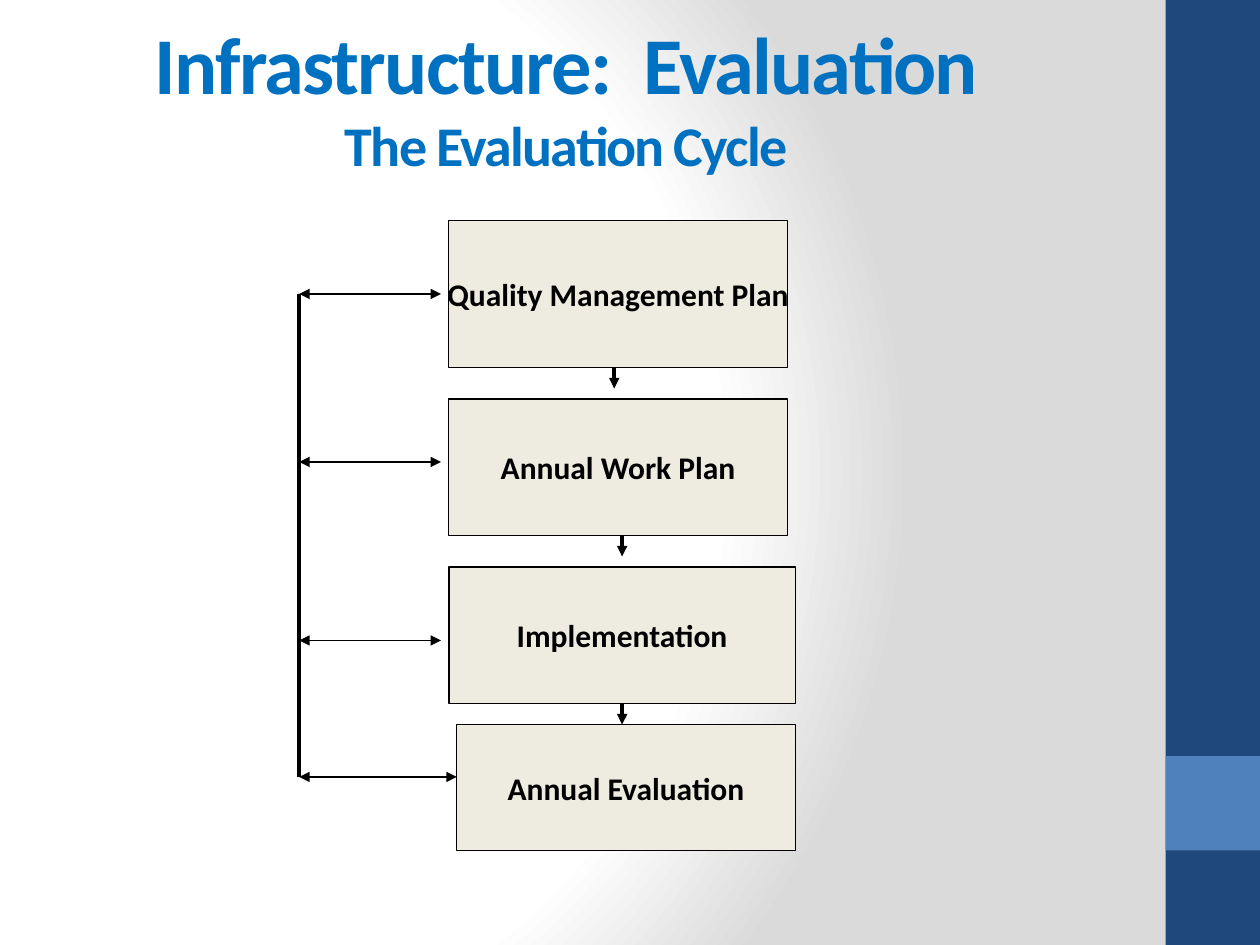
from lxml.etree import SubElement
from pptx import Presentation
from pptx.dml.color import RGBColor
from pptx.enum.shapes import MSO_CONNECTOR as Connector, MSO_SHAPE as Shape
from pptx.enum.text import MSO_ANCHOR as Anchor, PP_ALIGN as Align
from pptx.oxml import parse_xml
from pptx.oxml.ns import nsdecls, qn
from pptx.util import Inches, Pt

COLORS = {
    "navy": "1F497D",
    "blue": "4F81BD",
    "title": "0070C0",
    "box": "EEECE1",
    "ink": "000000",
    "white": "FFFFFF",
    "grey": "DADADA",
}
FONT = "Calibri"
COLUMNS, ROWS = 160, 90  # grid of the whole slide
WIDTH, HEIGHT = Inches(10), Inches(7.5)
SPINE = 38  # column of the feedback line

# Label, then left, top, right, bottom in grid units
STEPS = [
    ("Quality Management Plan", 57, 21, 100, 35),
    ("Annual Work Plan", 57, 38, 100, 51),
    ("Implementation", 57, 54, 101, 67),
    ("Annual Evaluation", 58, 69, 101, 81),
]
# Column, start row, end row
DOWN_ARROWS = [(78, 35, 37), (79, 51, 53), (79, 67, 69)]
# Row, end column
FEEDBACK_ARROWS = [(28, 56), (44, 56), (61, 56), (74, 58)]


def color(name):
    return RGBColor.from_string(COLORS[name])


def across(column):
    return round(WIDTH * column / COLUMNS)


def down(row):
    return round(HEIGHT * row / ROWS)


def area(left, top, right, bottom):
    return across(left), down(top), across(right - left), down(bottom - top)


def set_background(page):
    """Grey glow that fades to white, drawn as a circular gradient."""
    page.background.fill.solid()
    properties = page.element.find(".//" + qn("p:bgPr"))
    stops = "".join(
        f'<a:gs pos="{share * 1000}"><a:srgbClr val="{COLORS[name]}"/></a:gs>'
        for share, name in [(0, "white"), (75, "white"), (100, "grey")]
    )
    gradient = parse_xml(
        f'<a:gradFill {nsdecls("a")} rotWithShape="1"><a:gsLst>{stops}</a:gsLst>'
        '<a:path path="circle">'
        '<a:fillToRect l="20000" t="50000" r="100000" b="50000"/>'
        "</a:path></a:gradFill>"
    )
    properties.replace(properties.find(qn("a:solidFill")), gradient)


def add_block(page, bounds, fill):
    block = page.shapes.add_shape(Shape.RECTANGLE, *area(*bounds))
    block.shadow.inherit = False
    block.fill.solid()
    block.fill.fore_color.rgb = color(fill)
    block.line.fill.background()
    return block


def style_font(font, size, ink):
    font.name, font.size, font.bold = FONT, Pt(size), True
    font.color.rgb = color(ink)


def add_step(page, label, *bounds):
    box = add_block(page, bounds, "box")
    box.line.color.rgb = color("ink")
    box.line.width = Pt(0.75)
    frame = box.text_frame
    frame.word_wrap = False
    frame.vertical_anchor = Anchor.MIDDLE
    para = frame.paragraphs[0]
    para.text = label
    para.alignment = Align.CENTER
    style_font(para.font, 18, "ink")


def add_line(page, start, end, width, heads=()):
    """Heads may hold headEnd (at the start) and tailEnd (at the end)."""
    line = page.shapes.add_connector(
        Connector.STRAIGHT,
        across(start[0]), down(start[1]), across(end[0]), down(end[1]),
    )
    line.line.color.rgb = color("ink")
    line.line.width = Pt(width)
    stroke = line.line._get_or_add_ln()
    for head in heads:
        SubElement(stroke, qn(f"a:{head}"), type="triangle")
    SubElement(line.element.spPr, qn("a:effectLst"))


def add_title(page, heading, subheading):
    box = page.shapes.add_textbox(*area(14.5, 3.6, 129.3, 14))
    frame = box.text_frame
    frame.word_wrap = True
    frame.vertical_anchor = Anchor.MIDDLE
    frame.margin_bottom = 0
    para = frame.paragraphs[0]
    para.alignment = Align.CENTER
    style_font(para.font, 46, "title")
    for text, size in [(heading, 46), (subheading, 32)]:
        if para.runs:
            para.add_line_break()
        span = para.add_run()
        span.text = text
        span.font.size = Pt(size)
        span.font._element.set("spc", "-100")  # tighter letters


def main():
    deck = Presentation()
    deck.slide_width, deck.slide_height = WIDTH, HEIGHT
    page = deck.slides.add_slide(deck.slide_layouts[6])

    # Background and side band
    set_background(page)
    add_block(page, (148, 0, COLUMNS, ROWS), "navy")
    add_block(page, (148, 72, COLUMNS, 81), "blue")

    # Steps of the cycle
    for step in STEPS:
        add_step(page, *step)
    for column, start, end in DOWN_ARROWS:
        add_line(page, (column, start), (column, end), 2, ["tailEnd"])

    # Feedback line and its arrows
    first, last = FEEDBACK_ARROWS[0][0], FEEDBACK_ARROWS[-1][0]
    add_line(page, (SPINE, last), (SPINE, first), 2)
    for row, end in FEEDBACK_ARROWS:
        add_line(page, (SPINE, row), (end, row), 0.75, ["headEnd", "tailEnd"])

    add_title(page, "Infrastructure:  Evaluation", "The Evaluation Cycle")
    deck.save("out.pptx")


if __name__ == "__main__":
    main()
